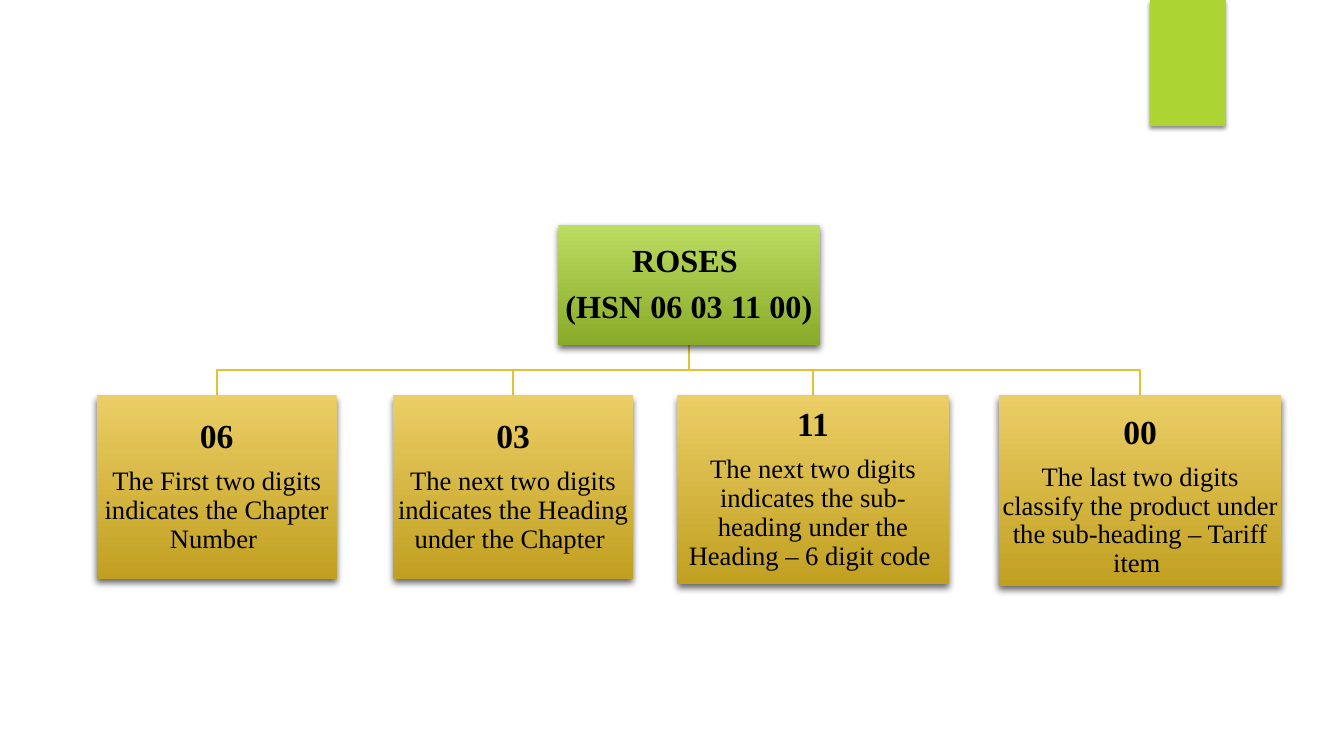
from dataclasses import dataclass

from lxml import etree
from pptx import Presentation, util as u
from pptx.dml.color import RGBColor
from pptx.enum import shapes, text
from pptx.oxml.ns import qn


@dataclass(frozen=True)
class Theme:
    font: str = "Times New Roman"
    ink: str = "000000"
    tag: str = "ACD433"
    line: str = "E6C133"
    green: tuple = ("BCDC62", "8AAA29")
    gold: tuple = ("EBCE66", "C1A021")
    root_size: int = 23
    code_size: int = 24
    body_size: int = 19


@dataclass(frozen=True)
class Area:
    """A rectangle in percent of the slide's width and height."""
    left: float
    top: float
    width: float
    height: float

    @property
    def middle(self):
        return self.left + self.width / 2

    @property
    def bottom(self):
        return self.top + self.height


class HierarchySlide:
    def __init__(self, presentation, theme):
        self.theme = theme
        self.slide_width = presentation.slide_width
        self.slide_height = presentation.slide_height
        self.slide = presentation.slides.add_slide(presentation.slide_layouts[6])

    def across(self, percent):
        return round(self.slide_width * percent / 100)

    def down(self, percent):
        return round(self.slide_height * percent / 100)

    def rectangle(self, area, colors, shadow):
        """Draw a plain or two-colour rectangle; shadow is opacity %, blur and distance."""
        shape = self.slide.shapes.add_shape(
            shapes.MSO_SHAPE.RECTANGLE, self.across(area.left), self.down(area.top),
            self.across(area.width), self.down(area.height))
        shape.line.fill.background()
        if len(colors) == 1:
            shape.fill.solid()
            shape.fill.fore_color.rgb = RGBColor.from_string(colors[0])
        else:
            shape.fill.gradient()
            shape.fill.gradient_angle = 270
            for stop, color in zip(shape.fill.gradient_stops, colors):
                stop.color.rgb = RGBColor.from_string(color)
        self.cast_shadow(shape, *shadow)
        return shape

    def cast_shadow(self, shape, opacity, blur, distance):
        shape.shadow.inherit = False
        effects = shape._element.spPr.find(qn("a:effectLst"))
        outer = etree.SubElement(
            effects, qn("a:outerShdw"), blurRad=str(u.Pt(blur)),
            dist=str(u.Pt(distance)), dir="5400000", algn="ctr", rotWithShape="0")
        color = etree.SubElement(outer, qn("a:srgbClr"), val=self.theme.ink)
        etree.SubElement(color, qn("a:alpha"), val=str(opacity * 1000))

    def box(self, area, colors, lines, inset=0.02, top_inset=0.02):
        """Draw a box whose lines are (wording, size, bold)."""
        shape = self.rectangle(area, colors, (60, 5, 3))
        frame = shape.text_frame
        frame.word_wrap = True
        frame.vertical_anchor = text.MSO_ANCHOR.MIDDLE
        frame.margin_left = frame.margin_right = frame.margin_bottom = u.Inches(inset)
        frame.margin_top = u.Inches(top_inset)
        frame.text = "\n".join(wording for wording, _, _ in lines)
        for paragraph, (_, size, bold) in zip(frame.paragraphs, lines):
            paragraph.alignment = text.PP_ALIGN.CENTER
            paragraph.line_spacing = 0.9
            paragraph.space_after = u.Pt(0.35 * size)
            for run in paragraph.runs:
                run.font.name = self.theme.font
                run.font.size = u.Pt(size)
                run.font.bold = bold
                run.font.color.rgb = RGBColor.from_string(self.theme.ink)

    def branch(self, parent, child):
        """Draw the stepped line from the parent's bottom to the child's top."""
        bend = (parent.bottom + child.top) / 2
        start, *rest = [
            (self.across(x), self.down(y)) for x, y in (
                (parent.middle, parent.bottom), (parent.middle, bend),
                (child.middle, bend), (child.middle, child.top))]
        builder = self.slide.shapes.build_freeform(*start)
        builder.add_line_segments(rest, close=False)
        shape = builder.convert_to_shape()
        shape.fill.background()
        shape.line.color.rgb = RGBColor.from_string(self.theme.line)
        shape.line.width = u.Pt(1.5)
        shape.shadow.inherit = False


ROOT = Area(41.55, 29.73, 19.43, 15.87)
CHILD_TOP = 52.27
# left, width, height, code, meaning, side inset, top inset
CHILDREN = (
    (7.2, 17.85, 24.27, "06",
     "The First two digits indicates the Chapter Number ", 0.02, 0.02),
    (29.25, 17.85, 24.27, "03",
     "The next two digits indicates the Heading under the Chapter ", 0.02, 0.02),
    (50.4, 20.18, 24.93, "11",
     "The next two digits indicates the sub-heading under the Heading – 6 digit code ",
     0.02, 0.02),
    (74.33, 21, 25.2, "00",
     "The last two digits classify the product under the sub-heading – Tariff item ",
     0, 0.13),
)


def main():
    presentation = Presentation()
    presentation.slide_width = u.Inches(13.33)
    presentation.slide_height = u.Inches(7.5)
    theme = Theme()
    page = HierarchySlide(presentation, theme)

    page.rectangle(Area(85.58, 0, 5.63, 16.67), (theme.tag,), (45, 3, 2))
    areas = [Area(left, CHILD_TOP, width, height)
             for left, width, height, *_ in CHILDREN]
    for area in reversed(areas):
        page.branch(ROOT, area)
    page.box(ROOT, theme.green, [
        (wording, theme.root_size, True) for wording in ("ROSES ", "(HSN 06 03 11 00)")])
    for area, (*_, code, meaning, inset, top_inset) in zip(areas, CHILDREN):
        page.box(area, theme.gold, [(code, theme.code_size, True),
                                    (meaning, theme.body_size, False)], inset, top_inset)
    presentation.save("out.pptx")


if __name__ == "__main__":
    main()
